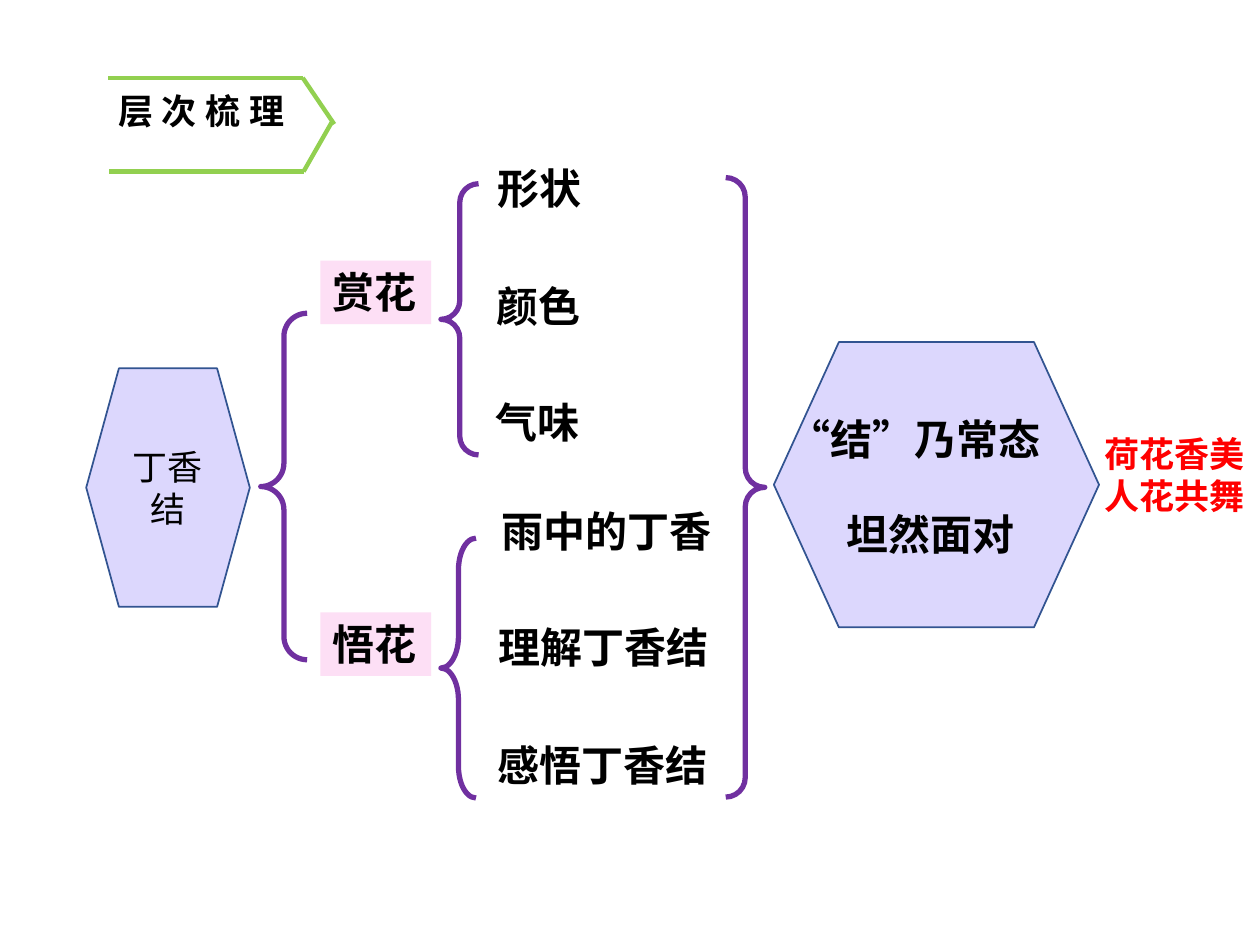
"""Build the slide that outlines the structure of a text about lilacs."""
from lxml import etree
from pptx import Presentation
from pptx import util as u
from pptx.dml import color
from pptx.enum import shapes, text
from pptx.oxml import ns

FONT = "Noto Sans CJK SC"
GREEN, PURPLE, PINK = "92D050", "7030A0", "FDDFF5"
LILAC, NAVY, BLACK, RED, WHITE = "DCD7FD", "325491", "000000", "FF0000", "FFFFFF"
KIND = shapes.MSO_SHAPE

HEADING_LINES = [
    (62, 44.5, 173, 44.5),
    (62.5, 98, 173.5, 98),
    (173, 44.5, 191, 71),
    (173.5, 98, 189.5, 70),
]
BRACES = [
    (KIND.LEFT_BRACE, (149, 179, 26.5, 198), 0.5),
    (KIND.LEFT_BRACE, (252, 105, 21.5, 155), 0.5),
    (KIND.LEFT_BRACE, (252, 307.5, 20, 148.5), 0.91),
    (KIND.RIGHT_BRACE, (414.7, 101.5, 22.3, 354), 0.5),
]
STAGES = [("赏花", 149), ("悟花", 350)]
DETAILS = [
    ("形状", 277.2, 89.3, 63.4),
    ("颜色", 276.5, 156.5, 63.4),
    ("气味", 275.8, 223.2, 63.4),
    ("雨中的丁香", 279.4, 285.1, 136),
    ("理解丁香结", 278, 351.4, 136),
    ("感悟丁香结", 277.2, 419, 136),
]
CONCLUSIONS = [("“结”乃常态", 443.5, 232.6, 160.6), ("坦然面对", 476.6, 287.3, 112.3)]


def points(values):
    """Turn plain numbers into point lengths."""
    return [u.Pt(value) for value in values]


def rgb(code):
    """Return the colour of a hex string."""
    return color.RGBColor.from_string(code)


def set_line(item, code, width):
    """Give a shape or connector a solid line."""
    item.line.color.rgb = rgb(code)
    item.line.width = u.Pt(width)


def write(item, lines, size=24, code=BLACK, bold=True, align=None, spacing=0, **layout):
    """Write one paragraph per line into a shape."""
    frame = item.text_frame
    settings = {
        "word_wrap": False,
        "auto_size": text.MSO_AUTO_SIZE.SHAPE_TO_FIT_TEXT,
        "vertical_anchor": text.MSO_ANCHOR.TOP,
    }
    for name, value in (settings | layout).items():
        setattr(frame, name, value)
    for index, line in enumerate(lines):
        para = frame.add_paragraph() if index else frame.paragraphs[0]
        para.alignment = align or text.PP_ALIGN.LEFT
        span = para.add_run()
        span.text = line
        span.font.color.rgb = rgb(code)
        for name, value in {"name": FONT, "size": u.Pt(size), "bold": bold}.items():
            setattr(span.font, name, value)
        properties = span._r.get_or_add_rPr()
        properties.set("lang", "zh-CN")
        if spacing:
            properties.set("spc", str(spacing * 100))
        etree.SubElement(properties, ns.qn("a:ea"), typeface=FONT)


def add_line(parent, ends):
    """Add a green heading line without a shadow."""
    line = parent.shapes.add_connector(shapes.MSO_CONNECTOR.STRAIGHT, *points(ends))
    set_line(line, GREEN, 2.5)
    etree.SubElement(line._element.spPr, ns.qn("a:effectLst"))


def add_shape(parent, kind, place, fill=None, line=None, width=1):
    """Add a preset shape with optional fill and line."""
    shape = parent.shapes.add_shape(kind, *points(place))
    shape.shadow.inherit = False
    if fill:
        shape.fill.solid()
        shape.fill.fore_color.rgb = rgb(fill)
    else:
        shape.fill.background()
    if line:
        set_line(shape, line, width)
    else:
        shape.line.fill.background()
    return shape


def add_brace(page, kind, place, curve):
    """Add a purple brace."""
    brace = add_shape(page, kind, place, line=PURPLE, width=3)
    brace.adjustments[0] = curve
    brace.adjustments[1] = 0.5


def add_label(page, lines, place, **style):
    """Add a text box."""
    write(page.shapes.add_textbox(*points(place)), lines, **style)


def add_heading(page):
    """Add the grouped arrow-shaped heading."""
    group = page.shapes.add_group_shape()
    for ends in HEADING_LINES[:2]:
        add_line(group, ends)
    title = add_shape(group, KIND.RECTANGLE, (60.5, 47.5, 132.5, 31.7), line=WHITE, width=0.75)
    write(title, ["层次梳理"], size=20, spacing=5, word_wrap=True)
    for ends in HEADING_LINES[2:]:
        add_line(group, ends)


def main():
    """Build and save the deck."""
    deck = Presentation()
    deck.slide_width, deck.slide_height = points((720, 540))
    page = deck.slides.add_slide(deck.slide_layouts[6])
    add_heading(page)
    topic = add_shape(page, KIND.FLOWCHART_PREPARATION, (49.3, 210.5, 93.5, 136.3), LILAC, NAVY)
    write(topic, ["丁香结"], size=20, bold=False, align=text.PP_ALIGN.CENTER, word_wrap=True,
          auto_size=text.MSO_AUTO_SIZE.NONE, vertical_anchor=text.MSO_ANCHOR.MIDDLE)
    for brace in BRACES:
        add_brace(page, *brace)
    for name, top in STAGES:
        write(add_shape(page, KIND.RECTANGLE, (183, top, 63.4, 36.3), PINK), [name])
    add_label(page, ["荷花香美", "人花共舞"], (624.2, 243.4, 95.8, 55.7), size=20, code=RED)
    add_shape(page, KIND.FLOWCHART_PREPARATION, (442.2, 195.5, 185.8, 163), LILAC, NAVY)
    for name, left, top, width in DETAILS + CONCLUSIONS:
        add_label(page, [name], (left, top, width, 36.3))
    deck.save("out.pptx")


if __name__ == "__main__":
    main()
